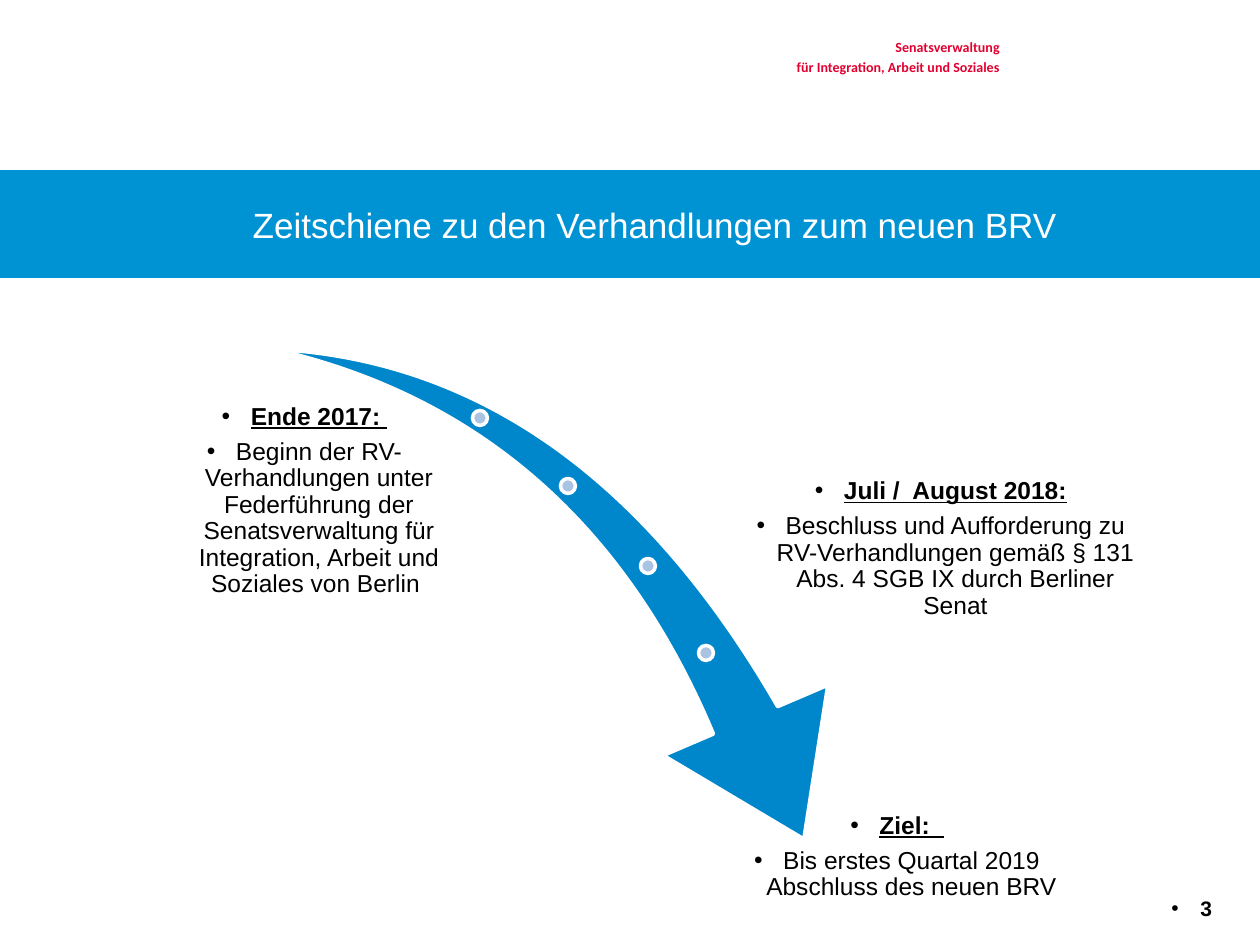
"""Build the slide with the timeline of the BRV negotiations."""
from lxml import etree
from pptx import Presentation
from pptx.dml.color import RGBColor
from pptx.enum.shapes import MSO_SHAPE
from pptx.enum.text import MSO_ANCHOR, MSO_AUTO_SIZE, PP_ALIGN
from pptx.oxml.ns import qn
from pptx.util import Emu, Pt

SWOOSH, OVAL, RECT = MSO_SHAPE.SWOOSH_ARROW, MSO_SHAPE.OVAL, MSO_SHAPE.RECTANGLE
TOP, MIDDLE = MSO_ANCHOR.TOP, MSO_ANCHOR.MIDDLE
CENTER, RIGHT = PP_ALIGN.CENTER, PP_ALIGN.RIGHT
NO_FIT = MSO_AUTO_SIZE.NONE

WHITE = RGBColor(0xFF, 0xFF, 0xFF)
BLACK = RGBColor(0x00, 0x00, 0x00)
RED = RGBColor(0xE2, 0x00, 0x30)
BANNER_BLUE = RGBColor(0x00, 0x93, 0xD3)
ARROW_BLUE = RGBColor(0x00, 0x86, 0xCB)
DOT_BLUE = RGBColor(0xAB, 0xC3, 0xE2)

PX_PER_INCH = 126
TITLE = "Zeitschiene zu den Verhandlungen zum neuen BRV"
DEPARTMENT = ["Senatsverwaltung", "für Integration, Arbeit und Soziales"]
PAGE = "3"
MILESTONES = [
    ("Ende 2017: ",
     "Beginn der RV-Verhandlungen unter Federführung der Senatsverwaltung "
     "für Integration, Arbeit und Soziales von Berlin ",
     (155, 407, 299, 188), MIDDLE),
    ("Juli /  August 2018:",
     "Beschluss und Aufforderung zu RV-Verhandlungen gemäß § 131 Abs. 4 "
     "SGB IX durch Berliner Senat",
     (745, 435, 392, 228), MIDDLE),
    ("Ziel:  ", "Bis erstes Quartal 2019 Abschluss des neuen BRV",
     (699, 811, 396, 115), TOP),
]
DOT_CENTERS = [(480, 418), (568, 486), (648, 566), (706, 653)]
DOT_SIZE = 15
BULLET_INDENT = 29


def px(length):
    return Emu(round(length * 914400 / PX_PER_INCH))


def box(rect):
    return [px(length) for length in rect]


def add_bullet(paragraph):
    properties = paragraph._p.get_or_add_pPr()
    properties.set("marL", str(px(BULLET_INDENT)))
    properties.set("indent", str(-px(BULLET_INDENT)))
    etree.SubElement(properties, qn("a:buFont")).set("typeface", "Arial")
    etree.SubElement(properties, qn("a:buChar")).set("char", "•")


def write(frame, lines, size, color=BLACK, font="Arial", align=CENTER, anchor=TOP,
          insets=(0, 0, 0, 0), bold=False, heading=False, bullet=False,
          wrap=True, spacing=1.0, after=0):
    frame.auto_size = NO_FIT
    frame.word_wrap = wrap
    frame.vertical_anchor = anchor
    (frame.margin_left, frame.margin_top,
     frame.margin_right, frame.margin_bottom) = box(insets)
    for index, line in enumerate(lines):
        paragraph = frame.add_paragraph() if index else frame.paragraphs[0]
        if bullet:
            add_bullet(paragraph)
        paragraph.alignment = align
        paragraph.line_spacing = spacing
        paragraph.space_before = Pt(0)
        paragraph.space_after = Pt(after)
        run = paragraph.add_run()
        run.text = line
        run.font.name = font
        run.font.size = Pt(size)
        run.font.color.rgb = color
        is_heading = heading and index == 0
        run.font.bold = bold or is_heading
        run.font.underline = is_heading


def paint(shape, fill, line=None, width=1):
    shape.fill.solid()
    shape.fill.fore_color.rgb = fill
    if line is None:
        shape.line.fill.background()
    else:
        shape.line.color.rgb = line
        shape.line.width = Pt(width)


def add_figure(shapes, kind, rect, fill, line=None, width=1):
    figure = shapes.add_shape(kind, *box(rect))
    figure.shadow.inherit = False
    paint(figure, fill, line, width)
    return figure


def main():
    deck = Presentation()
    deck.slide_width, deck.slide_height = px(1260), px(945)
    shapes = deck.slides.add_slide(deck.slide_layouts[5]).shapes

    department = add_figure(shapes, RECT, (784, 33, 229, 50), WHITE)
    write(department.text_frame, DEPARTMENT, 8, RED, "Calibri", RIGHT,
          insets=(13, 6, 13, 6), bold=True, wrap=False, after=1.6)

    banner = shapes.title
    banner.left, banner.top, banner.width, banner.height = box((0, 171, 1260, 106))
    paint(banner, BANNER_BLUE, BANNER_BLUE)
    write(banner.text_frame, [TITLE], 20, WHITE, anchor=MIDDLE,
          insets=(63, 32, 13, 32))

    arrow = add_figure(shapes, SWOOSH, (261, 368, 621, 433), ARROW_BLUE, WHITE, 2)
    arrow.rotation = 73.3
    arrow.adjustments[0], arrow.adjustments[1] = 0.16, 0.31

    for x, y in DOT_CENTERS:
        rect = (x - DOT_SIZE / 2, y - DOT_SIZE / 2, DOT_SIZE, DOT_SIZE)
        add_figure(shapes, OVAL, rect, DOT_BLUE, WHITE, 2)

    for date, event, rect, anchor in MILESTONES:
        milestone = shapes.add_textbox(*box(rect))
        write(milestone.text_frame, [date, event], 14, anchor=anchor,
              insets=(2, 2, 2, 2), heading=True, bullet=True, spacing=0.9, after=4.9)

    page = shapes.add_textbox(*box((1116, 896, 96, 35)))
    write(page.text_frame, [PAGE], 12, align=RIGHT, bold=True, bullet=True)

    deck.save("out.pptx")


if __name__ == "__main__":
    main()
